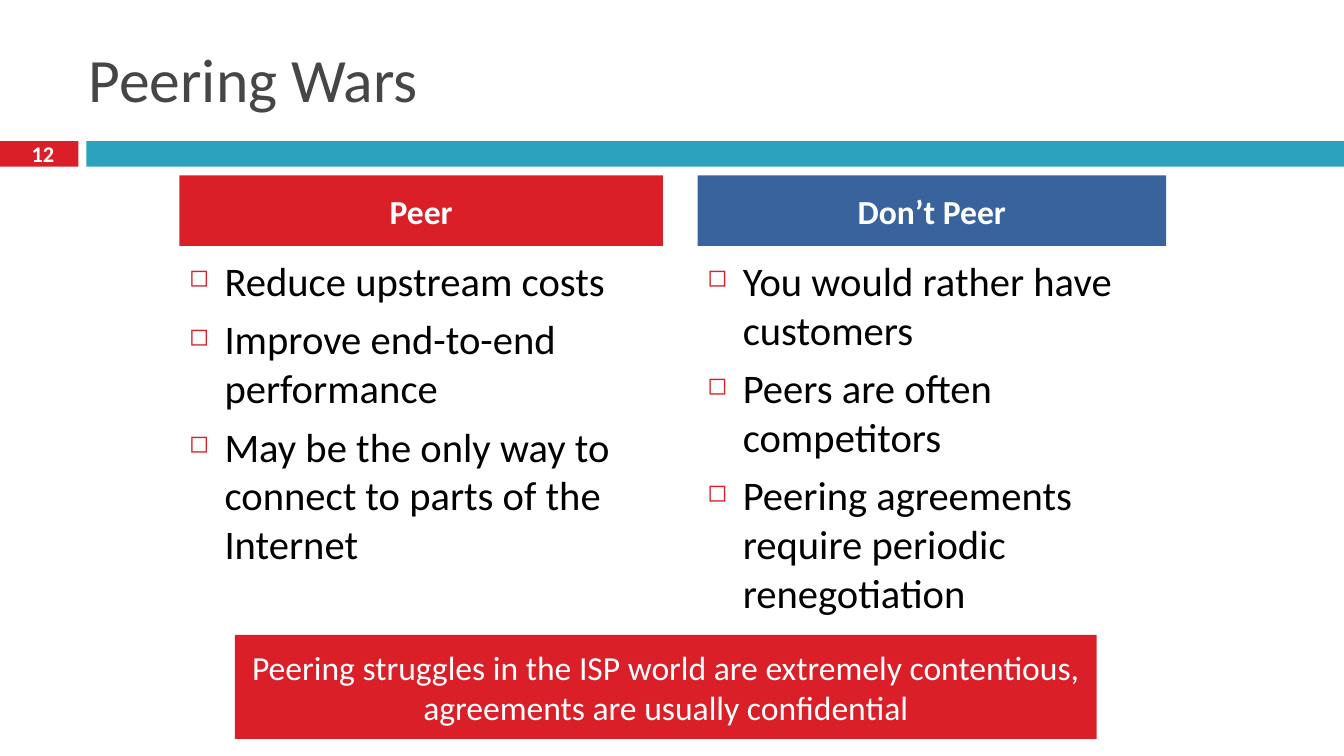
import pptx
import pptx.dml.color
import pptx.enum.shapes
import pptx.enum.text
import pptx.util
from lxml import etree
from pptx.oxml.ns import qn

Cm = pptx.util.Cm
Pt = pptx.util.Pt
RGBColor = pptx.dml.color.RGBColor
ALIGN = pptx.enum.text.PP_ALIGN
ANCHOR = pptx.enum.text.MSO_ANCHOR

RED = RGBColor(0xDA, 0x1F, 0x28)
TEAL = RGBColor(0x2D, 0xA2, 0xBF)
BLUE = RGBColor(0x39, 0x63, 0x9D)
GREY = RGBColor(0x46, 0x46, 0x46)
BLACK = RGBColor(0x00, 0x00, 0x00)
WHITE = RGBColor(0xFF, 0xFF, 0xFF)


class Deck:
    """Holds the text style and the slide being built."""

    font_name = "Calibri"

    def __init__(self):
        self.presentation = pptx.Presentation()
        self.presentation.slide_width = Cm(33.87)
        self.presentation.slide_height = Cm(19.05)
        layout = self.presentation.slide_layouts[5]
        self.slide = self.presentation.slides.add_slide(layout)

    def apply(self, target, values):
        for name, value in values.items():
            setattr(target, name, value)

    def fill_text(self, shape, lines, size, color, bold=False, align=ALIGN.LEFT,
                  anchor=ANCHOR.MIDDLE, bullets=False):
        frame = shape.text_frame
        self.apply(frame, {"text": "\n".join(lines), "word_wrap": True,
                           "auto_size": pptx.enum.text.MSO_AUTO_SIZE.NONE,
                           "vertical_anchor": anchor})
        for index, paragraph in enumerate(frame.paragraphs):
            paragraph.alignment = align
            paragraph.space_before = Pt(7 if index else 0)
            if bullets:
                self.bullet(paragraph)
            for styled in (paragraph, *paragraph.runs):
                self.apply(styled.font, {"name": self.font_name, "size": Pt(size),
                                         "bold": bold})
                styled.font.color.rgb = color

    def bullet(self, paragraph):
        properties = paragraph._p.get_or_add_pPr()
        properties.set("marL", str(Cm(0.89)))
        properties.set("indent", str(-Cm(0.89)))
        tint = etree.SubElement(properties, qn("a:buClr"))
        etree.SubElement(tint, qn("a:srgbClr"), val=str(RED))
        etree.SubElement(properties, qn("a:buSzPct"), val="60000")
        etree.SubElement(properties, qn("a:buChar"), char="◻")

    def title(self, text, left, top, width, height):
        heading = self.slide.shapes.title
        self.apply(heading, {"left": Cm(left), "top": Cm(top),
                             "width": Cm(width), "height": Cm(height)})
        self.fill_text(heading, [text], 44, GREY)

    def bar(self, fill, left, top, width, height, text=None, bold=False):
        block = self.slide.shapes.add_shape(
            pptx.enum.shapes.MSO_SHAPE.RECTANGLE,
            Cm(left), Cm(top), Cm(width), Cm(height))
        block.shadow.inherit = False
        block.fill.solid()
        block.fill.fore_color.rgb = fill
        block.line.fill.background()
        if text:
            self.fill_text(block, [text], 24, WHITE, bold, ALIGN.CENTER)

    def text(self, lines, left, top, width, height, size, color, **style):
        box = self.slide.shapes.add_textbox(Cm(left), Cm(top), Cm(width), Cm(height))
        self.fill_text(box, lines, size, color, **style)


def main():
    deck = Deck()
    deck.bar(RED, 0, 3.56, 1.98, 0.64)
    deck.bar(TEAL, 2.18, 3.56, 31.69, 0.64)
    deck.title("Peering Wars", 1.98, 0.76, 30.2, 2.41)
    deck.text(["12"], 0, 3.51, 2.16, 0.74, 16, WHITE, bold=True, align=ALIGN.CENTER)

    sides = [
        ("Peer", RED, 4.52, 12.19, 9.96,
         ["Reduce upstream costs",
          "Improve end-to-end performance",
          "May be the only way to connect to parts of the Internet"]),
        ("Don’t Peer", BLUE, 17.58, 11.81, 11.07,
         ["You would rather have customers",
          "Peers are often competitors",
          "Peering agreements require periodic renegotiation"]),
    ]
    for heading, fill, left, width, height, reasons in sides:
        deck.text(reasons, left, 6.32, width, height, 29, BLACK,
                  anchor=ANCHOR.TOP, bullets=True)
        deck.bar(fill, left, 4.42, width, 1.78, heading, bold=True)

    deck.bar(RED, 5.92, 16, 21.72, 2.62,
             "Peering struggles in the ISP world are extremely contentious, "
             "agreements are usually confidential")
    deck.presentation.save("out.pptx")


if __name__ == "__main__":
    main()
